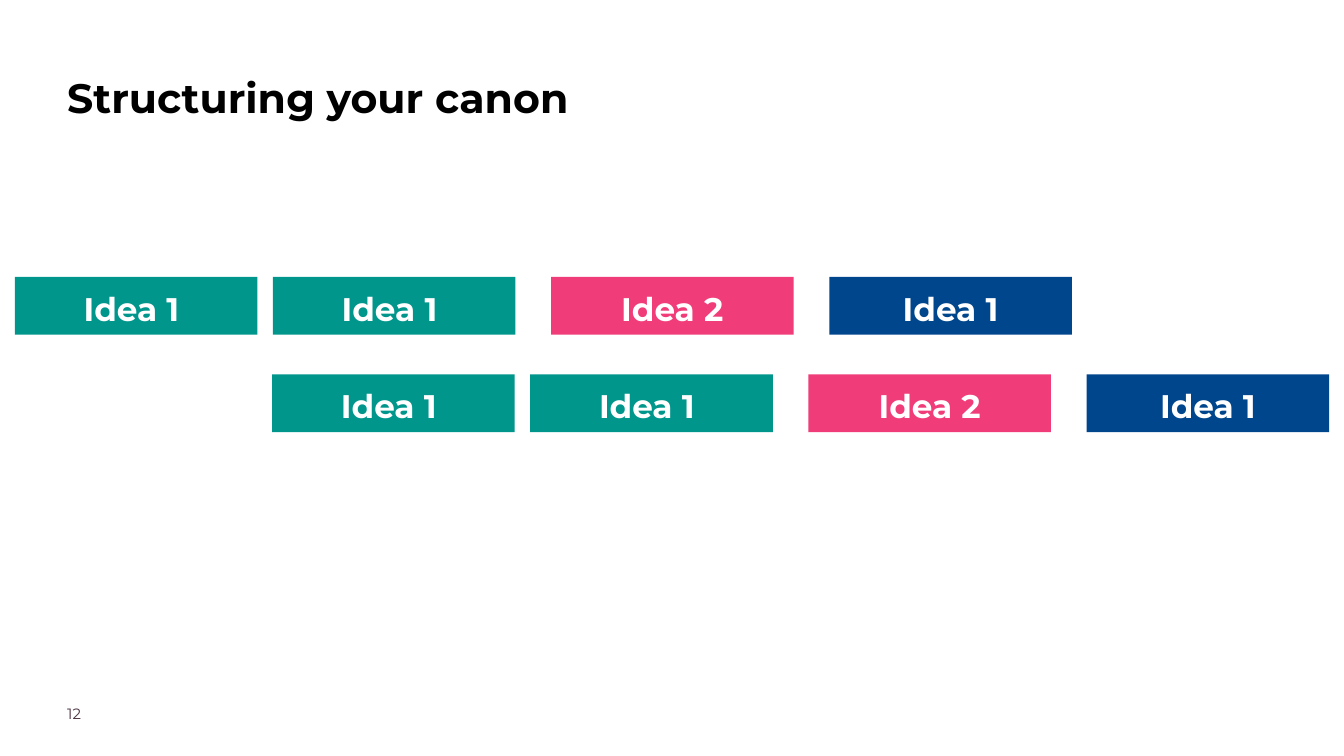
from dataclasses import dataclass

from pptx import Presentation
from pptx.dml.color import RGBColor
from pptx.enum.shapes import MSO_SHAPE
from pptx.enum.text import MSO_ANCHOR, MSO_AUTO_SIZE, PP_ALIGN
from pptx.util import Pt

PX = 9144  # EMU per px, 100 px to the inch


@dataclass(frozen=True)
class Theme:
    font: str = "Montserrat"
    title_size: int = 44
    idea_size: int = 35
    number_size: int = 16
    black: str = "000000"
    plum: str = "4B3241"
    white: str = "FFFFFF"
    teal: str = "00968C"
    pink: str = "F03C78"
    blue: str = "00468C"


THEME = Theme()

# Label, fill and offset from the start of a voice
IDEAS = [
    ("Idea 1 ", THEME.teal, 0),
    ("Idea 1 ", THEME.teal, 384),
    ("Idea 2", THEME.pink, 798),
    ("Idea 1", THEME.blue, 1212),
]
IDEA_W, IDEA_H = 361, 86
VOICES = [(22, 412), (405, 557)]  # left and top of each entry


def emu(*lengths):
    return [n * PX for n in lengths]


def write(sp, text, size, color, bold=False, align=PP_ALIGN.LEFT, spacing=1.0):
    tf = sp.text_frame
    tf.word_wrap = True
    tf.auto_size = MSO_AUTO_SIZE.NONE
    tf.vertical_anchor = MSO_ANCHOR.TOP
    tf.margin_left = tf.margin_top = tf.margin_right = tf.margin_bottom = 0
    p = tf.paragraphs[0]
    p.alignment = align
    p.line_spacing = spacing
    r = p.add_run()
    r.text = text
    r.font.name = THEME.font
    r.font.size = Pt(size)
    r.font.bold = bold
    r.font.color.rgb = RGBColor.from_string(color)


def add_title(s, text, x, y, w, h):
    sp = s.shapes.title
    sp.left, sp.top, sp.width, sp.height = emu(x, y, w, h)
    write(sp, text, THEME.title_size, THEME.black, bold=True, spacing=1.15)


def add_page_number(s, text, x, y, w, h):
    sp = s.shapes.add_textbox(*emu(x, y, w, h))
    write(sp, text, THEME.number_size, THEME.plum)


def add_voice(s, x, y):
    for label, fill, offset in IDEAS:
        sp = s.shapes.add_shape(MSO_SHAPE.RECTANGLE,
                                *emu(x + offset, y, IDEA_W, IDEA_H))
        sp.shadow.inherit = False
        sp.fill.solid()
        sp.fill.fore_color.rgb = RGBColor.from_string(fill)
        sp.line.fill.background()
        write(sp, label, THEME.idea_size, THEME.white, bold=True,
              align=PP_ALIGN.CENTER, spacing=1.3)


def main():
    prs = Presentation()
    prs.slide_width, prs.slide_height = emu(2000, 1125)
    s = prs.slides.add_slide(prs.slide_layouts[5])

    # Heading and page number
    add_title(s, "Structuring your canon", 100, 97, 1444, 178)
    add_page_number(s, "12", 100, 1048, 157, 39)

    # The second voice enters one idea later
    for x, y in VOICES:
        add_voice(s, x, y)

    prs.save("out.pptx")


if __name__ == "__main__":
    main()
